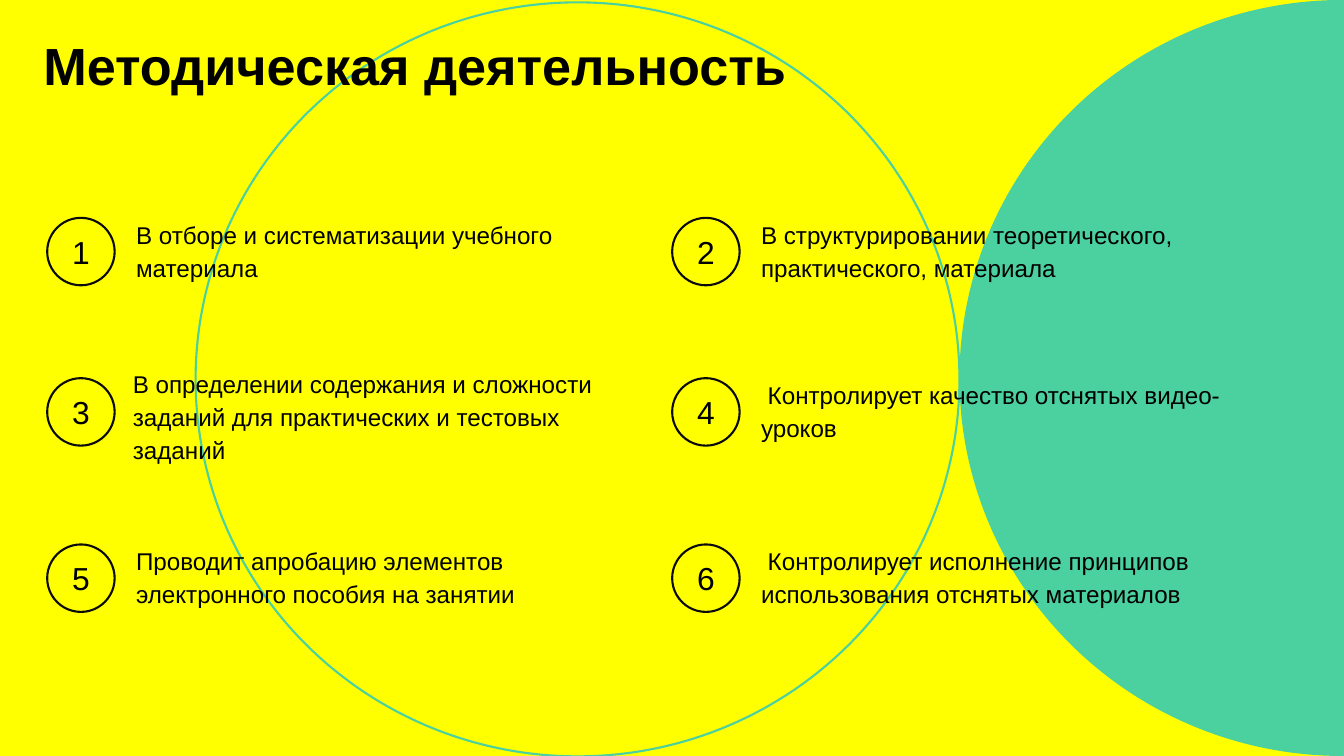
from dataclasses import dataclass

from pptx import Presentation
from pptx.dml.color import RGBColor
from pptx.enum.shapes import MSO_SHAPE as Shape
from pptx.enum.text import MSO_ANCHOR as Anchor, MSO_AUTO_SIZE as AutoSize, PP_ALIGN as Align
from pptx.util import Cm, Pt

# Content
TITLE = "Методическая деятельность"
TASKS = [
    "В отборе и систематизации учебного материала",
    "В структурировании теоретического, практического, материала",
    "В определении содержания и сложности заданий для практических и тестовых заданий",
    " Контролирует качество отснятых видео-уроков",
    "Проводит апробацию элементов электронного пособия на занятии",
    " Контролирует исполнение принципов использования отснятых материалов",
]


@dataclass(frozen=True)
class Theme:
    background: RGBColor = RGBColor(0xFF, 0xFF, 0x00)
    accent: RGBColor = RGBColor(0x4B, 0xD0, 0xA0)
    outline: RGBColor = RGBColor(0x0B, 0x0B, 0x0B)
    text: RGBColor = RGBColor(0x00, 0x00, 0x00)
    font: str = "Arial"
    title_size: float = 37.3
    number_size: float = 22.7
    task_size: float = 17.3
    line_width: float = 1.5


THEME = Theme()

# Layout in centimetres
COLUMNS = 2
LEFT, COLUMN_PITCH = 1.19, 15.75
ROW_TOPS = [5.49, 9.53, 13.72]
BADGE = 1.7
TASK_OFFSET, TASK_SIZE = (2.24, 0.43), (12.29, 0.71)
NUDGES = {3: (-0.08, 0.13)}


def set_values(target, values):
    for name, value in values.items():
        setattr(target, name, value)


def place(box, left, top, width, height):
    set_values(box, {"left": Cm(left), "top": Cm(top), "width": Cm(width), "height": Cm(height)})


def write(box, text, size, anchor=Anchor.MIDDLE, align=Align.LEFT, spacing=1.0, bold=False):
    frame = box.text_frame
    set_values(frame, {
        "word_wrap": True, "auto_size": AutoSize.NONE, "vertical_anchor": anchor,
        "margin_left": 0, "margin_top": 0, "margin_right": 0, "margin_bottom": 0,
    })
    para = frame.paragraphs[0]
    set_values(para, {"alignment": align, "line_spacing": spacing})
    span = para.add_run()
    span.text = text
    set_values(span.font, {"name": THEME.font, "size": Pt(size), "bold": bold})
    span.font.color.rgb = THEME.text


def add_circle(shapes, left, top, width, height, fill=None, line=None):
    circle = shapes.add_shape(Shape.OVAL, Cm(left), Cm(top), Cm(width), Cm(height))
    circle.shadow.inherit = False
    if fill is None:
        circle.fill.background()
    else:
        circle.fill.solid()
        circle.fill.fore_color.rgb = fill
    if line is None:
        circle.line.fill.background()
    else:
        circle.line.color.rgb = line
        circle.line.width = Pt(THEME.line_width)
    return circle


def add_task(page, number, text):
    row, column = divmod(number - 1, COLUMNS)
    left, top = LEFT + column * COLUMN_PITCH, ROW_TOPS[row]
    shift_x, shift_y = NUDGES.get(number, (0, 0))
    group = page.shapes.add_group_shape()

    box = group.shapes.add_textbox(0, 0, 0, 0)
    place(box, left + TASK_OFFSET[0] + shift_x, top + TASK_OFFSET[1] + shift_y, *TASK_SIZE)
    write(box, text, THEME.task_size, spacing=1.14)

    badge = add_circle(group.shapes, left, top, BADGE, BADGE, line=THEME.outline)
    write(badge, str(number), THEME.number_size, align=Align.CENTER)


def main():
    deck = Presentation()
    set_values(deck, {"slide_width": Cm(33.87), "slide_height": Cm(19.05)})
    page = deck.slides.add_slide(deck.slide_layouts[5])
    page.background.fill.solid()
    page.background.fill.fore_color.rgb = THEME.background

    # Large background circles
    add_circle(page.shapes, 24.18, 0, 19.3, 19.05, fill=THEME.accent)
    add_circle(page.shapes, 4.93, 0.06, 19.25, 19, line=THEME.accent)

    # Title, brought in front of the circles
    title = page.shapes.title
    page.shapes._spTree.append(title._element)
    place(title, 1.09, 1.02, 31.57, 1.42)
    write(title, TITLE, THEME.title_size, anchor=Anchor.TOP, spacing=0.9, bold=True)

    # Numbered tasks
    for number, text in enumerate(TASKS, start=1):
        add_task(page, number, text)

    deck.save("out.pptx")


if __name__ == "__main__":
    main()
